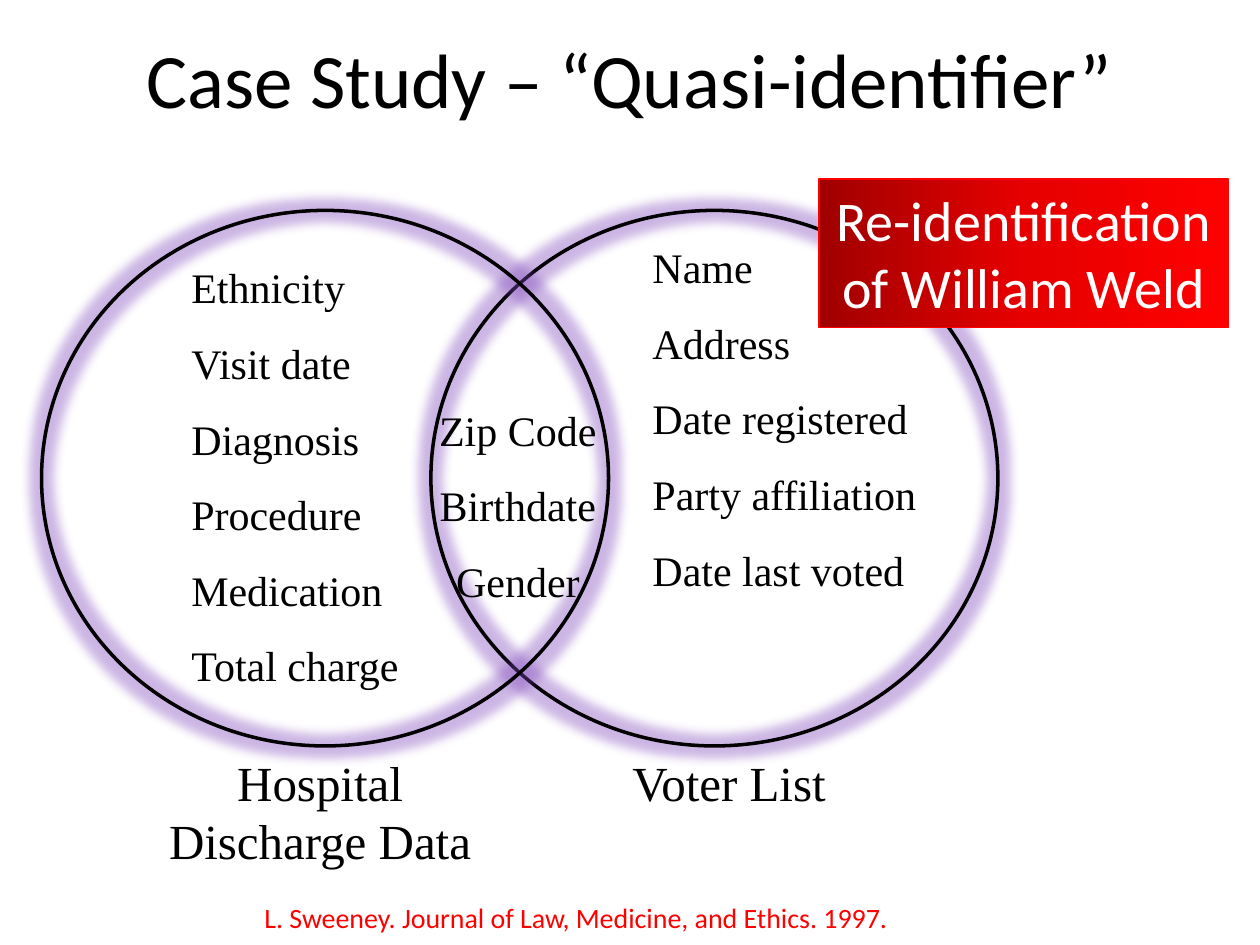
from lxml import etree
from pptx import Presentation
from pptx.dml.color import RGBColor
from pptx.enum import shapes, text
from pptx.oxml.ns import qn
from pptx.util import Inches, Pt

BLACK = RGBColor(0, 0, 0)
WHITE = RGBColor(255, 255, 255)
RED = RGBColor(255, 0, 0)
MID = RGBColor(0xE6, 0, 0)
DARK = RGBColor(0xA0, 0, 0)
GLOW = RGBColor(0x80, 0x48, 0xBC)
SERIF, SANS = "Times New Roman", "Calibri"
LEFT, MIDDLE = text.PP_ALIGN.LEFT, text.PP_ALIGN.CENTER

deck = Presentation()
deck.slide_width, deck.slide_height = Inches(10), Inches(7.5)
slide = deck.slides.add_slide(deck.slide_layouts[6])


def write(shape, lines, size, name=SERIF, color=BLACK, align=LEFT, gap=1.0):
    frame = shape.text_frame
    frame.word_wrap = True
    frame.text = "\n".join(lines)
    for para in frame.paragraphs:
        para.alignment, para.line_spacing = align, gap
        for key, value in {"size": Pt(size), "name": name}.items():
            setattr(para.font, key, value)
        para.font.color.rgb = color
    return frame


def add_color(parent, tag, color, **attrs):
    """Add a DrawingML element that holds one RGB colour; return the colour."""
    node = etree.SubElement(parent, qn(tag), attrs)
    return etree.SubElement(node, qn("a:srgbClr"), val=str(color))


title = slide.shapes.add_textbox(Inches(0.5), Inches(0.08), Inches(9), Inches(1.08))
frame = write(title, ["Case Study – “Quasi-identifier”"], 44, SANS, align=MIDDLE)
frame.vertical_anchor = text.MSO_ANCHOR.MIDDLE

# Overlapping circles with a soft purple glow
for left in (3.42, 0.33):
    ring = slide.shapes.add_shape(shapes.MSO_SHAPE.OVAL, Inches(left), Inches(1.67),
                                  Inches(4.5), Inches(4.25))
    ring.fill.background()
    ring.line.color.rgb, ring.line.width = BLACK, Pt(2)
    ring.shadow.inherit = False
    effects = ring._element.spPr.find(qn("a:effectLst"))
    tint = add_color(effects, "a:glow", GLOW, rad=str(Pt(11)))
    etree.SubElement(tint, qn("a:alpha"), val="40000")

shared = ["Zip Code", "Birthdate", "Gender"]
voter = ["Name", "Address", "Date registered", "Party affiliation", "Date last voted"]
patient = ["Ethnicity", "Visit date", "Diagnosis", "Procedure", "Medication",
           "Total charge"]
labels = [
    ((3.25, 2.96, 1.72, 1.92), shared, 24, MIDDLE, 1.5),
    ((5.08, 1.67, 2.58, 3.13), voter, 24, LEFT, 1.5),
    ((4.92, 5.92, 2.75, 0.57), ["Voter List"], 28, LEFT, 1.0),
    ((1.42, 1.83, 2.17, 3.69), patient, 24, LEFT, 1.5),
    ((1.08, 5.92, 2.92, 1.04), ["Hospital Discharge Data"], 28, MIDDLE, 1.0),
]
for place, lines, size, align, gap in labels:
    box = slide.shapes.add_textbox(*map(Inches, place))
    write(box, lines, size, align=align, gap=gap)

# Red callout with a three-stop gradient
call = slide.shapes.add_shape(shapes.MSO_SHAPE.RECTANGLE, Inches(6.5), Inches(1.42),
                              Inches(3.25), Inches(1.18))
call.shadow.inherit = False
call.fill.gradient()
call.fill.gradient_angle = 0
stops = next(call._element.spPr.iter(qn("a:gsLst")))
for stop in list(stops):
    stops.remove(stop)
for place, color in ((0, DARK), (50, MID), (100, RED)):
    add_color(stops, "a:gs", color, pos=str(place * 1000))
call.line.color.rgb, call.line.width = RED, Pt(0.75)
frame = write(call, ["Re-identification of William Weld"], 32, SANS, WHITE, MIDDLE)
frame.vertical_anchor = text.MSO_ANCHOR.TOP

cite = slide.shapes.add_textbox(Inches(2), Inches(7.1), Inches(5.21), Inches(0.37))
frame = write(cite, ["L. Sweeney. Journal of Law, Medicine, and Ethics. 1997."],
              16, SANS, RED)
frame.word_wrap = False

deck.save("out.pptx")
